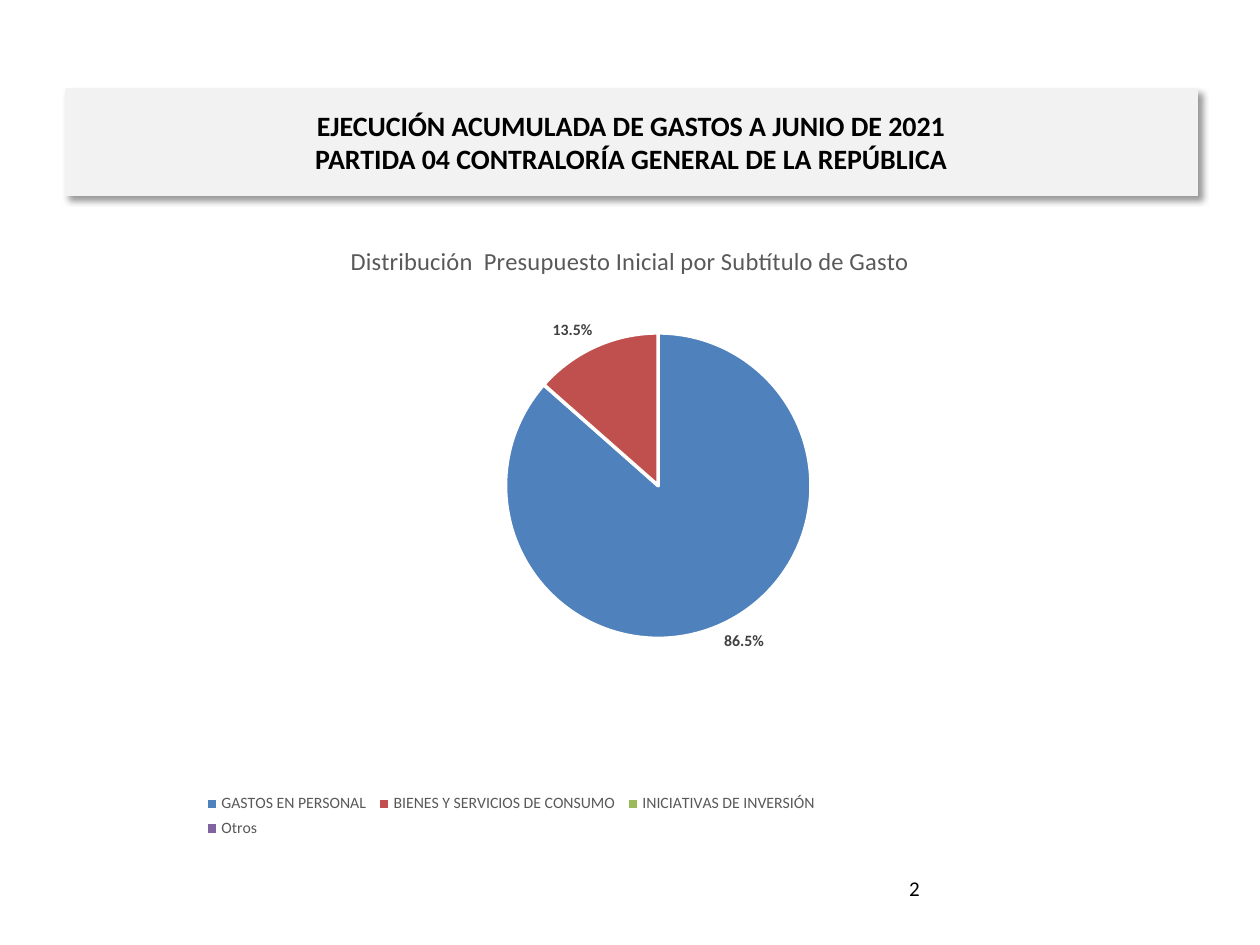
"""Build the budget distribution slide with its pie chart."""
from lxml.etree import SubElement
from pptx import Presentation
from pptx.chart.data import CategoryChartData
from pptx.dml.color import RGBColor
from pptx.enum.chart import XL_CHART_TYPE as ChartType
from pptx.enum.chart import XL_LABEL_POSITION as LabelPosition
from pptx.enum.chart import XL_LEGEND_POSITION as LegendPosition
from pptx.enum.text import MSO_ANCHOR as Anchor
from pptx.enum.text import PP_ALIGN as Align
from pptx.oxml import parse_xml
from pptx.oxml.ns import nsdecls, qn
from pptx.util import Cm, Pt

BLACK = RGBColor(0x00, 0x00, 0x00)
WHITE = RGBColor(0xFF, 0xFF, 0xFF)
BAND = RGBColor(0xF2, 0xF2, 0xF2)
GREY = RGBColor(0x59, 0x59, 0x59)
DARK_GREY = RGBColor(0x40, 0x40, 0x40)
BLUE = RGBColor(0x4F, 0x81, 0xBD)
RED = RGBColor(0xC0, 0x50, 0x4D)
GREEN = RGBColor(0x9B, 0xBB, 0x59)
PURPLE = RGBColor(0x80, 0x64, 0xA2)

TITLE = "EJECUCIÓN ACUMULADA DE GASTOS A JUNIO DE 2021\vPARTIDA 04 CONTRALORÍA GENERAL DE LA REPÚBLICA"
CHART_TITLE = "Distribución  Presupuesto Inicial por Subtítulo de Gasto"
PAGE_NUMBER = "2"
EXPENSES = [
    ("GASTOS EN PERSONAL", 86.5, BLUE),
    ("BIENES Y SERVICIOS DE CONSUMO", 13.5, RED),
    ("INICIATIVAS DE INVERSIÓN", 0, GREEN),
    ("Otros", 0, PURPLE),
]
PLOT_LAYOUT = {"x": 0.09, "y": 0.18, "w": 0.87, "h": 0.49}
LEGEND_LAYOUT = {"x": 0.12, "y": 0.91, "w": 0.55, "h": 0.1}


def format_font(font, size, color, bold=False):
    font.name = "Calibri"
    font.size = Pt(size)
    font.bold = bold
    font.color.rgb = color


def write_text(frame, text, size=12, color=BLACK, bold=False, align=Align.LEFT, anchor=Anchor.TOP):
    frame.word_wrap = True
    frame.vertical_anchor = anchor
    frame.text = text
    paragraph = frame.paragraphs[0]
    paragraph.alignment = align
    for run in paragraph.runs:
        format_font(run.font, size, color, bold)


def add_layout(parent, position, inner=False):
    target = '<c:layoutTarget val="inner"/>' if inner else ""
    modes = '<c:xMode val="edge"/><c:yMode val="edge"/>'
    sizes = "".join(f'<c:{key} val="{value}"/>' for key, value in position.items())
    return parse_xml(
        f'<c:layout {nsdecls("c")}><c:manualLayout>{target}{modes}{sizes}</c:manualLayout></c:layout>'
    )


def add_title(slide):
    title = slide.shapes.title
    title.left, title.top, title.width, title.height = Cm(1.32), Cm(1.78), Cm(22.81), Cm(2.16)
    title.fill.solid()
    title.fill.fore_color.rgb = BAND
    title.line.color.rgb = BAND
    title.line.width = Pt(0.75)
    write_text(title.text_frame, TITLE, size=16, bold=True, align=Align.CENTER, anchor=Anchor.MIDDLE)
    title._element.spPr.append(parse_xml(
        f'<a:effectLst {nsdecls("a")}><a:outerShdw blurRad="50800" dist="38100" dir="2700000" '
        'algn="tl" rotWithShape="0"><a:srgbClr val="000000"><a:alpha val="40000"/></a:srgbClr>'
        '</a:outerShdw></a:effectLst>'
    ))


def hide_label(labels, index):
    label = labels._element._insert_dLbl_in_sequence(index)
    for child in list(label)[1:]:
        label.remove(child)
    SubElement(label, qn("c:delete")).set("val", "1")


def add_pie(slide):
    data = CategoryChartData()
    data.categories = [name for name, _, _ in EXPENSES]
    data.add_series("Series 1", [value for _, value, _ in EXPENSES])
    chart = slide.shapes.add_chart(
        ChartType.PIE, Cm(1.27), Cm(4.45), Cm(22.86), Cm(12.57), data
    ).chart
    format_font(chart.font, 10, BLACK)
    write_text(chart.chart_title.text_frame, CHART_TITLE, size=14, color=GREY, align=Align.CENTER)
    chart.chart_title.include_in_layout = False

    chart.has_legend = True
    legend = chart.legend
    legend.position = LegendPosition.BOTTOM
    legend.include_in_layout = False
    format_font(legend.font, 9, GREY)

    plot_area = chart._chartSpace.chart.plotArea
    for old in plot_area.findall(qn("c:layout")):
        plot_area.remove(old)
    plot_area.insert(0, add_layout(plot_area, PLOT_LAYOUT, inner=True))
    for old in legend._element.findall(qn("c:layout")):
        legend._element.remove(old)
    legend._element.find(qn("c:legendPos")).addnext(add_layout(legend._element, LEGEND_LAYOUT))

    series = chart.plots[0].series[0]
    labels = series.data_labels
    labels.show_value = False
    labels.show_percentage = True
    labels.number_format = "0.0%"
    labels.number_format_is_linked = False
    labels.position = LabelPosition.OUTSIDE_END
    format_font(labels.font, 9, DARK_GREY, bold=True)
    for index, (_, value, color) in enumerate(EXPENSES):
        point = series.points[index]
        point.format.fill.solid()
        point.format.fill.fore_color.rgb = color
        point.format.line.color.rgb = WHITE
        point.format.line.width = Pt(2)
        if not value:
            hide_label(labels, index)


def main():
    presentation = Presentation()
    presentation.slide_width, presentation.slide_height = Cm(25.4), Cm(19.05)
    slide = presentation.slides.add_slide(presentation.slide_layouts[5])
    add_title(slide)
    page_box = slide.shapes.add_textbox(Cm(18.08), Cm(17.53), Cm(5.92), Cm(1.02))
    write_text(page_box.text_frame, PAGE_NUMBER)
    add_pie(slide)
    presentation.save("out.pptx")


if __name__ == "__main__":
    main()
